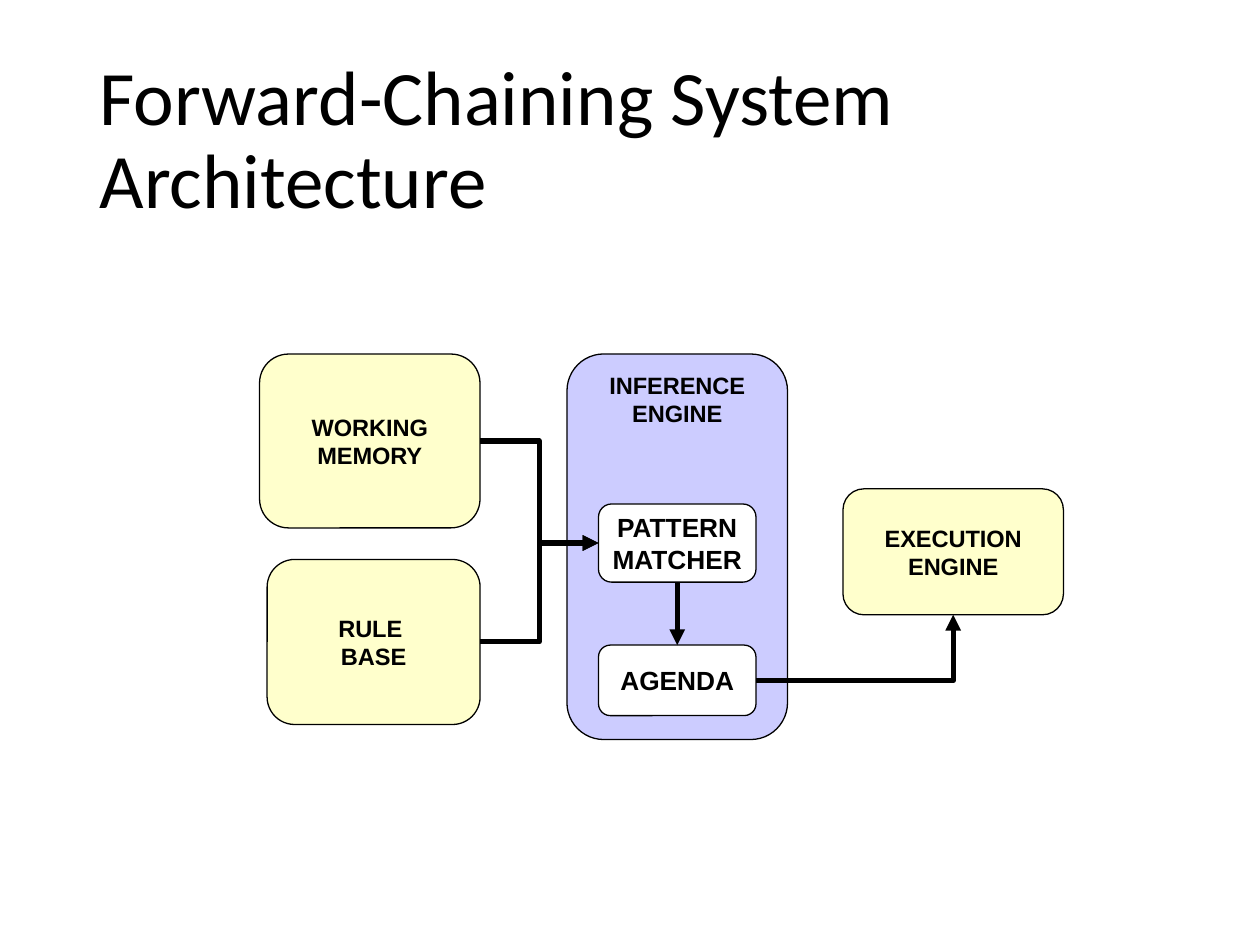
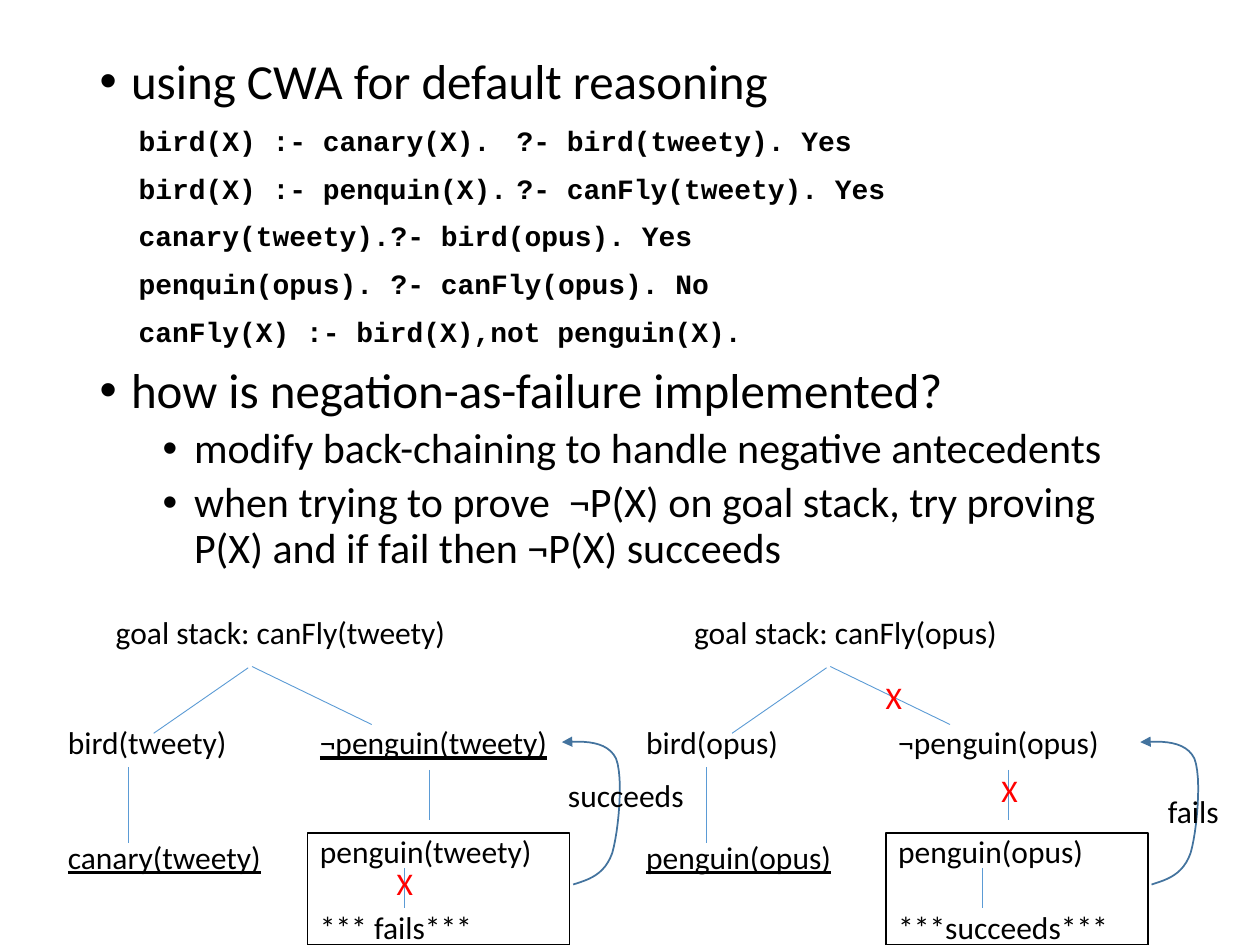
from lxml.etree import SubElement
from pptx import Presentation
from pptx.dml.color import RGBColor
from pptx.enum.shapes import MSO_CONNECTOR as Connector, MSO_SHAPE as Shape
from pptx.enum.text import MSO_ANCHOR as Anchor, MSO_AUTO_SIZE as AutoSize, PP_ALIGN as Align
from pptx.oxml.ns import qn
from pptx.util import Inches, Pt

COLUMNS, ROWS = 100, 75
TOP, LEFT, BOTTOM, RIGHT = range(4)
COLORS = {
    "ink": "000000",
    "paper": "FFFFFF",
    "store": "FFFFCC",
    "engine": "CCCCFF",
    "branch": "5B9BD5",
    "return": "43739E",
    "blocked": "FF0000",
}
BODY_FONT, LABEL_FONT, CODE_FONT = "Calibri", "Arial", "Courier New"
TITLE_ONLY, TITLE_AND_BODY = 5, 1
LINE_HEIGHT = 22
TREE_STEP = 45.9


def color(name):
    return RGBColor.from_string(COLORS[name])


def bezier(start, first, second, end, steps=12):
    for step in range(1, steps + 1):
        t = step / steps
        weights = ((1 - t) ** 3, 3 * t * (1 - t) ** 2, 3 * t * t * (1 - t), t ** 3)
        yield tuple(
            sum(weight * point[axis] for weight, point in zip(weights, (start, first, second, end)))
            for axis in (0, 1)
        )


class Deck:
    def __init__(self):
        self.presentation = Presentation()
        self.presentation.slide_width = Inches(10)
        self.presentation.slide_height = Inches(7.5)
        self.slide = None

    def new_slide(self, layout):
        self.slide = self.presentation.slides.add_slide(self.presentation.slide_layouts[layout])

    def x(self, columns):
        return round(self.presentation.slide_width * columns / COLUMNS)

    def y(self, rows):
        return round(self.presentation.slide_height * rows / ROWS)

    def area(self, left, top, width, height):
        return self.x(left), self.y(top), self.x(width), self.y(height)

    def place(self, placeholder, *area):
        placeholder.left, placeholder.top, placeholder.width, placeholder.height = self.area(*area)
        frame = placeholder.text_frame
        frame.auto_size = AutoSize.NONE
        return frame

    def paragraph(self, frame, *runs, size=18, font=BODY_FONT, ink="ink", bold=False,
                  align=Align.LEFT, before=0, spacing=1.0):
        paragraph = frame.paragraphs[0]
        if paragraph.runs:
            paragraph = frame.add_paragraph()
        paragraph.alignment = align
        paragraph.space_before = Pt(before)
        paragraph.line_spacing = spacing
        for text, underlined in runs:
            run = paragraph.add_run()
            run.text = text
            run.font.name = font
            run.font.size = Pt(size)
            run.font.bold = bold
            run.font.underline = underlined
            run.font.color.rgb = color(ink)
        return paragraph

    def indent(self, paragraph, margin, hanging=0.0, bullet=None):
        properties = paragraph._p.get_or_add_pPr()
        properties.set("marL", str(Inches(margin)))
        properties.set("indent", str(Inches(-hanging)))
        if bullet:
            SubElement(properties, qn("a:buFont")).set("typeface", LABEL_FONT)
            SubElement(properties, qn("a:buChar")).set("char", bullet)
        else:
            SubElement(properties, qn("a:buNone"))

    def tab_stop(self, paragraph, inches):
        stops = SubElement(paragraph._p.get_or_add_pPr(), qn("a:tabLst"))
        stop = SubElement(stops, qn("a:tab"))
        stop.set("pos", str(Inches(inches)))
        stop.set("algn", "l")

    def title(self, text):
        frame = self.place(self.slide.shapes.title, 6.9, 4, 86.2, 14.5)
        frame.vertical_anchor = Anchor.MIDDLE
        self.paragraph(frame, (text, False), size=44, spacing=0.9)

    def body(self):
        title = self.slide.shapes.title
        title._element.getparent().remove(title._element)
        return self.place(self.slide.placeholders[1], 6.9, 4, 86.2, 63.5)

    def bullet(self, frame, text, level=0):
        paragraph = self.paragraph(frame, (text, False), size=28 - 4 * level,
                                   before=10 - 5 * level, spacing=0.9)
        paragraph.level = level
        self.indent(paragraph, 0.25 + 0.5 * level, 0.25, "•")

    def code(self, frame, text):
        paragraph = self.paragraph(frame, (text, False), size=16, font=CODE_FONT, bold=True,
                                   before=10, spacing=0.9)
        self.indent(paragraph, 0.31)
        self.tab_stop(paragraph, 4)

    def text_box(self, *area, wrap=False):
        frame = self.slide.shapes.add_textbox(*self.area(*area)).text_frame
        frame.word_wrap = wrap
        frame.auto_size = AutoSize.SHAPE_TO_FIT_TEXT
        return frame

    def label(self, text, *area, ink="ink", wrap=False):
        self.paragraph(self.text_box(*area, wrap=wrap), (text, False), ink=ink)

    def box(self, kind, fill, *area, line=0.75, anchor=Anchor.MIDDLE):
        shape = self.slide.shapes.add_shape(kind, *self.area(*area))
        shape.shadow.inherit = False
        shape.fill.solid()
        shape.fill.fore_color.rgb = color(fill)
        self.stroke(shape, "ink", line)
        shape.text_frame.vertical_anchor = anchor
        return shape

    def component(self, lines, fill, *area, size=13.5, anchor=Anchor.MIDDLE):
        shape = self.box(Shape.ROUNDED_RECTANGLE, fill, *area, anchor=anchor)
        shape.text_frame.word_wrap = False
        for line in lines:
            self.paragraph(shape.text_frame, (line, False), size=size, font=LABEL_FONT,
                           bold=True, align=Align.CENTER)
        return shape

    def stroke(self, shape, ink, width, arrow=False):
        shape.line.color.rgb = color(ink)
        shape.line.width = Pt(width)
        if arrow:
            SubElement(shape.line._get_or_add_ln(), qn("a:tailEnd")).set("type", "triangle")

    def connector(self, kind, start, end, ink, width, arrow=False):
        connector = self.slide.shapes.add_connector(
            kind, self.x(start[0]), self.y(start[1]), self.x(end[0]), self.y(end[1]))
        self.stroke(connector, ink, width, arrow)
        SubElement(connector._element.spPr, qn("a:effectLst"))
        return connector

    def flow(self, source, source_side, target, target_side, kind=Connector.ELBOW):
        connector = self.connector(kind, (0, 0), (1, 1), "ink", 3, arrow=True)
        connector.begin_connect(source, source_side)
        connector.end_connect(target, target_side)
        return connector

    def branch(self, start, end):
        self.connector(Connector.STRAIGHT, start, end, "branch", 0.5)

    def curved_arrow(self, start, *curves):
        points = [start]
        for curve in curves:
            points.extend(bezier(points[-1], *curve))
        points = [(self.x(column), self.y(row)) for column, row in points]
        builder = self.slide.shapes.build_freeform(*points[0])
        builder.add_line_segments(points[1:], close=False)
        shape = builder.convert_to_shape()
        shape.shadow.inherit = False
        shape.fill.background()
        self.stroke(shape, "return", 1, arrow=True)


def architecture_slide(deck):
    deck.new_slide(TITLE_ONLY)
    deck.title("Forward-Chaining System Architecture")
    memory = deck.component(("WORKING", "MEMORY"), "store", 20.6, 28.1, 17.5, 13.8)
    rules = deck.component(("RULE ", "BASE"), "store", 21.2, 44.4, 16.9, 13.1)
    execution = deck.component(("EXECUTION", "ENGINE"), "store", 66.9, 38.8, 17.5, 10)
    deck.component(("INFERENCE", "ENGINE"), "engine", 45, 28.1, 17.5, 30.6, anchor=Anchor.TOP)
    matcher = deck.component(("PATTERN", "MATCHER"), "paper", 47.5, 40, 12.5, 6.2, size=15)
    agenda = deck.component(("AGENDA",), "paper", 47.5, 51.2, 12.5, 5.6, size=15)

    for source in (rules, memory):
        deck.flow(source, RIGHT, matcher, LEFT)
    deck.flow(matcher, BOTTOM, agenda, TOP, Connector.STRAIGHT)
    to_execution = deck.flow(agenda, RIGHT, execution, BOTTOM)
    to_execution._element.spPr.find(qn("a:prstGeom")).set("prst", "bentConnector2")


def goal_tree(deck, offset, bird, fact, negation_holds, outcome, verdict, verdict_area, crosses):
    deck.label(f"goal stack: canFly({bird})", 8.2 + offset, 48.2, 28.5, 4)

    goals = deck.text_box(4.4 + offset, 56.9, 40.6, 13.1)
    subgoals = deck.paragraph(goals, (f"bird({bird})\t", False),
                              (f"¬penguin({bird})", negation_holds))
    deck.tab_stop(subgoals, 2)
    deck.paragraph(goals, (fact, True), before=2 * LINE_HEIGHT)

    proof = deck.box(Shape.RECTANGLE, "paper", 24.4 + offset, 66.1, 20.8, 8.9, line=1).text_frame
    deck.paragraph(proof, (f"penguin({bird})", False))
    deck.paragraph(proof, (outcome, False), before=LINE_HEIGHT)

    for start, end in (
        ((19.7, 53), (12.2, 58.2)),
        ((20, 52.9), (29.5, 57.5)),
        ((10.2, 60.9), (10.2, 66.9)),
        ((32.1, 68.9), (32.1, 72.1)),
        ((34.1, 61.1), (34.1, 65.1)),
    ):
        deck.branch((start[0] + offset, start[1]), (end[0] + offset, end[1]))

    curves = (
        ((46.8, 69.8), (48, 69.4), (48.6, 67.7)),
        ((49.1, 66), (49.5, 61.7), (48.9, 60.2)),
        ((48.2, 58.8), (46.4, 58.8), (44.6, 58.9)),
    )
    deck.curved_arrow((45.5 + offset, 70.2),
                      *[[(column + offset, row) for column, row in curve] for curve in curves])
    deck.label(verdict, *verdict_area)
    for left, top in crosses:
        deck.label("X", left, top, 2.3, 4, ink="blocked", wrap=True)


def negation_slide(deck):
    deck.new_slide(TITLE_AND_BODY)
    body = deck.body()
    deck.bullet(body, "using CWA for default reasoning")
    for line in (
        "bird(X) :- canary(X).\t?- bird(tweety). Yes",
        "bird(X) :- penquin(X).\t?- canFly(tweety). Yes",
        "canary(tweety).\t?- bird(opus). Yes",
        "penquin(opus).\t?- canFly(opus). No",
        "canFly(X) :- bird(X),not penguin(X).",
    ):
        deck.code(body, line)
    deck.bullet(body, "how is negation-as-failure implemented?")
    deck.bullet(body, "modify back-chaining to handle negative antecedents", level=1)
    deck.bullet(body, "when trying to prove  ¬P(X) on goal stack, try proving P(X) "
                      "and if fail then ¬P(X) succeeds", level=1)

    goal_tree(deck, 0, "tweety", "canary(tweety)", True, "*** fails***",
              "succeeds", (44.1, 61.1, 11.3, 4), [(30.5, 68.1)])
    goal_tree(deck, TREE_STEP, "opus", "penguin(opus)", False, "***succeeds***",
              "fails", (91.7, 62.4, 6.1, 4), [(69.3, 53.3), (78.5, 60.7)])


def main():
    deck = Deck()
    architecture_slide(deck)
    negation_slide(deck)
    deck.presentation.save("out.pptx")


if __name__ == "__main__":
    main()
